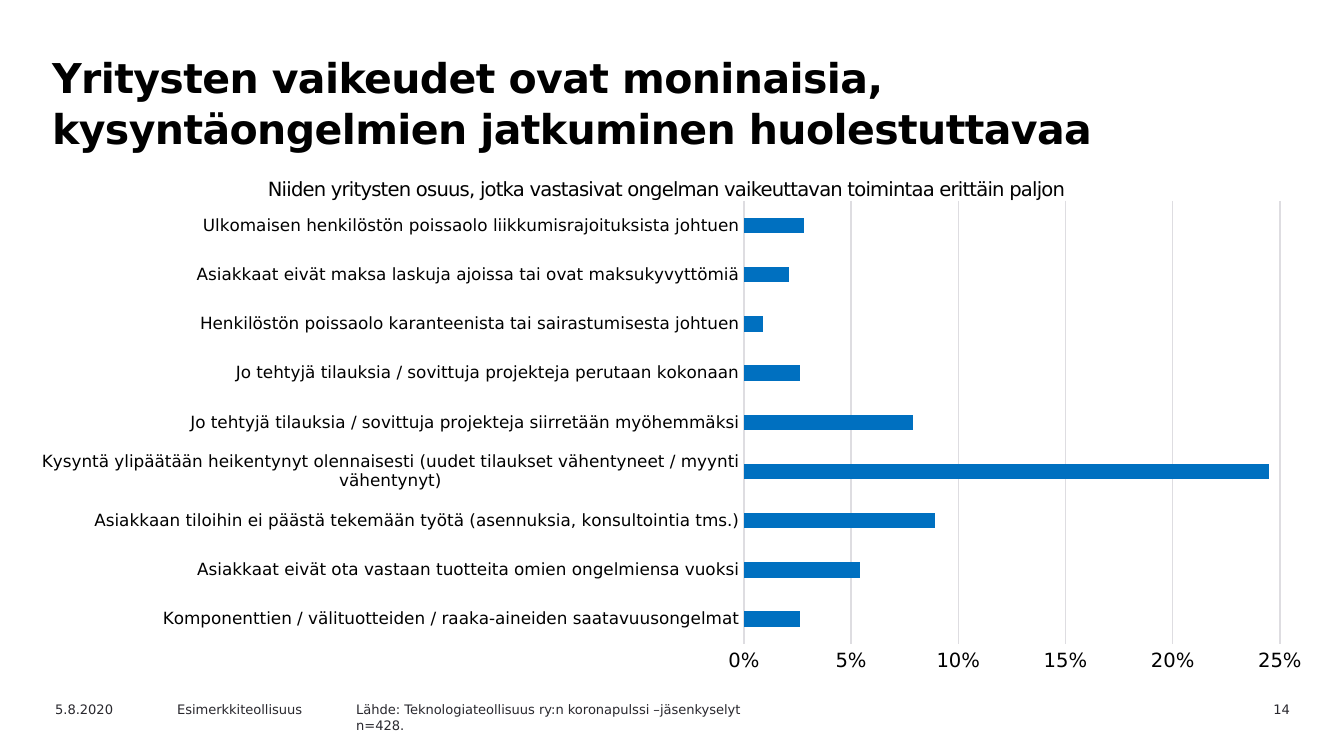
from lxml.etree import SubElement
from pptx import Presentation
from pptx.chart.data import CategoryChartData
from pptx.dml.color import RGBColor
from pptx.enum.chart import XL_CHART_TYPE as ChartType, XL_TICK_MARK as TickMark
from pptx.enum.text import PP_ALIGN as Align
from pptx.oxml.ns import qn
from pptx.util import Pt

EMU_PER_PX = 914400 / 134.4
FONT = "DejaVu Sans"
BLACK, GREY, GRID, BLUE = "000000", "29282E", "DEDDE1", "0070C0"

SHARES = [
    ("Komponenttien / välituotteiden / raaka-aineiden saatavuusongelmat", 0.026),
    ("Asiakkaat eivät ota vastaan tuotteita omien ongelmiensa vuoksi", 0.054),
    ("Asiakkaan tiloihin ei päästä tekemään työtä (asennuksia, konsultointia tms.)", 0.089),
    ("Kysyntä ylipäätään heikentynyt olennaisesti (uudet tilaukset vähentyneet / myynti vähentynyt)", 0.245),
    ("Jo tehtyjä tilauksia / sovittuja projekteja siirretään myöhemmäksi", 0.079),
    ("Jo tehtyjä tilauksia / sovittuja projekteja perutaan kokonaan", 0.026),
    ("Henkilöstön poissaolo karanteenista tai sairastumisesta johtuen", 0.009),
    ("Asiakkaat eivät maksa laskuja ajoissa tai ovat maksukyvyttömiä", 0.021),
    ("Ulkomaisen henkilöstön poissaolo liikkumisrajoituksista johtuen", 0.028),
]


def px(length):
    return round(length * EMU_PER_PX)


def color(value):
    return RGBColor.from_string(value)


class SlideBuilder:
    def __init__(self, slide):
        self.slide = slide

    def style_font(self, font, size, fill, bold=False):
        font.name, font.size, font.bold = FONT, Pt(size), bold
        font.color.rgb = color(fill)

    def text(self, box, lines, size=7, fill=GREY, bold=False, align=Align.LEFT,
             line_pt=None, tracking=0, inset=None):
        """Add a text box; tracking is in hundredths of a point."""
        frame = self.slide.shapes.add_textbox(*map(px, box)).text_frame
        frame.word_wrap = True
        if inset is not None:
            frame.margin_left = frame.margin_right = px(inset)
            frame.margin_top = frame.margin_bottom = px(inset)
        frame.text = lines
        for paragraph in frame.paragraphs:
            paragraph.alignment = align
            if line_pt:
                paragraph.line_spacing = Pt(line_pt)
            for run in paragraph.runs:
                self.style_font(run.font, size, fill, bold)
                if tracking:
                    run._r.get_or_add_rPr().set("spc", str(tracking))

    def bar_chart(self, box, plot_box, rows):
        data = CategoryChartData(number_format="0%")
        data.categories = [label for label, _ in rows]
        data.add_series("Series 1", [share for _, share in rows])
        chart = self.slide.shapes.add_chart(
            ChartType.BAR_CLUSTERED, *map(px, box), data).chart
        chart.has_legend = chart.has_title = False
        self.style_font(chart.font, 10, GREY)
        plot = chart.plots[0]
        plot.gap_width, plot.vary_by_categories = 219, False
        bar_fill = plot.series[0].format.fill
        bar_fill.solid()
        bar_fill.fore_color.rgb = color(BLUE)

        category_axis, value_axis = chart.category_axis, chart.value_axis
        for axis, size in ((category_axis, 9), (value_axis, 10.5)):
            axis.major_tick_mark = axis.minor_tick_mark = TickMark.NONE
            self.style_font(axis.tick_labels.font, size, BLACK)
        category_axis.has_major_gridlines = False
        value_axis.has_major_gridlines = True
        for line in (category_axis.format.line, value_axis.major_gridlines.format.line):
            line.color.rgb, line.width = color(GRID), Pt(0.75)
        value_axis.format.line.fill.background()
        value_axis.minimum_scale, value_axis.maximum_scale = 0, 0.25
        value_axis.major_unit = 0.05
        value_axis.tick_labels.number_format = "0%"
        value_axis.tick_labels.number_format_is_linked = False
        self.place_plot(chart, box, plot_box)

    def place_plot(self, chart, box, plot_box):
        """Fix the inner plot area, as fractions of the chart box."""
        left, top, width, height = box
        plot_left, plot_top, plot_width, plot_height = plot_box
        plot_area = chart._chartSpace.chart.plotArea
        for old in plot_area.findall(qn("c:layout")):
            plot_area.remove(old)
        layout = SubElement(plot_area, qn("c:layout"))
        plot_area.insert(0, layout)
        manual = SubElement(layout, qn("c:manualLayout"))
        for tag, value in (
            ("layoutTarget", "inner"), ("xMode", "edge"), ("yMode", "edge"),
            ("x", (plot_left - left) / width), ("y", (plot_top - top) / height),
            ("w", plot_width / width), ("h", plot_height / height),
        ):
            SubElement(manual, qn(f"c:{tag}")).set("val", str(value))


def main():
    presentation = Presentation()
    presentation.slide_width, presentation.slide_height = px(1344), px(756)
    builder = SlideBuilder(presentation.slides.add_slide(presentation.slide_layouts[6]))

    builder.text((39, 45, 1175, 95),
                 "Yritysten vaikeudet ovat moninaisia, kysyntäongelmien jatkuminen huolestuttavaa",
                 size=22, fill=BLACK, bold=True, line_pt=27, tracking=-30)
    builder.bar_chart((16, 191, 1312, 492), (744, 201, 536, 443), SHARES)
    builder.text((263, 172, 868, 35),
                 "Niiden yritysten osuus, jotka vastasivat ongelman vaikeuttavan toimintaa erittäin paljon",
                 size=10.5, fill=BLACK, tracking=-40, inset=5)

    footer_top = 695
    builder.text((42, footer_top, 134, 24), "5.8.2020")
    builder.text((164, footer_top, 191, 24), "Esimerkkiteollisuus")
    builder.text((343, footer_top, 961, 43),
                 "Lähde: Teknologiateollisuus ry:n koronapulssi –jäsenkyselyt\nn=428.")
    builder.text((1177, footer_top, 126, 24), "14", align=Align.RIGHT)

    presentation.save("out.pptx")


if __name__ == "__main__":
    main()
